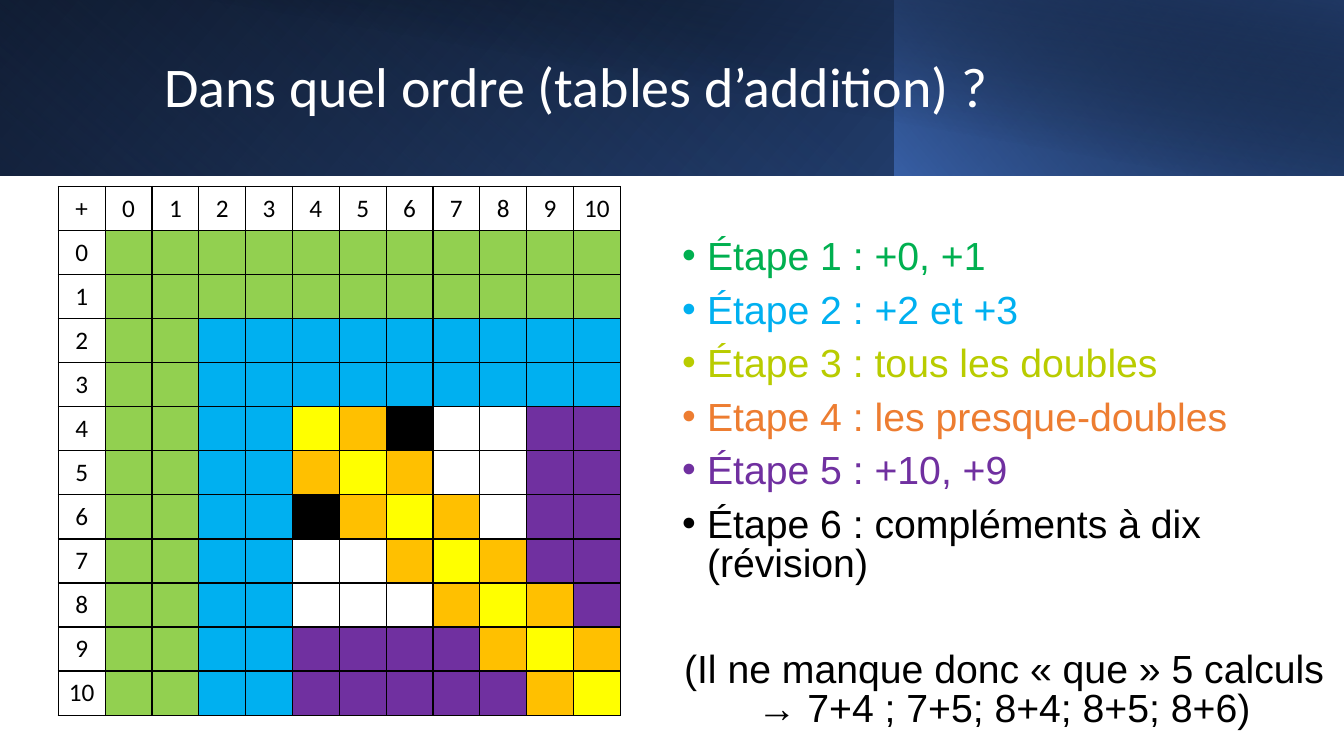
from lxml import etree
from pptx import Presentation
from pptx import util as u
from pptx.dml.color import RGBColor
from pptx.enum import shapes, text
from pptx.oxml import ns

Cm, Pt = u.Cm, u.Pt
GREEN, BLUE, YELLOW, ORANGE = "92D050", "00B0F0", "FFFF00", "FFC000"
BLACK, PURPLE, WHITE = "000000", "7030A0", "FFFFFF"

STEPS = [
    ("Étape 1\u00a0: +0, +1", "00B050"),
    ("Étape 2\u00a0: +2 et +3", BLUE),
    ("Étape 3\u00a0: tous les doubles", "B9CC00"),
    ("Etape 4 : les presque-doubles", "ED7D31"),
    ("Étape 5\u00a0: +10, +9", PURPLE),
    ("Étape 6\u00a0: compléments à dix (révision)", BLACK),
]
REMARK = "(Il ne manque donc «\u00a0que\u00a0» 5 calculs → 7+4 ; 7+5; 8+4; 8+5; 8+6)"


def rgb(hex_color):
    return RGBColor.from_string(hex_color)


def sub(parent, tag, **attrs):
    return etree.SubElement(parent, ns.qn(tag), {k: str(v) for k, v in attrs.items()})


def write(p, words, size=18, font="Calibri", color=BLACK, align=None,
          spacing=None, before=None, bullet=False):
    if bullet:
        pPr = p._p.get_or_add_pPr()
        pPr.set("marL", str(Cm(0.63)))
        pPr.set("indent", str(-Cm(0.63)))
        sub(pPr, "a:buFont", typeface="Arial")
        sub(pPr, "a:buChar", char="•")
    p.alignment = align
    p.line_spacing = spacing
    if before:
        p.space_before = Pt(before)
    r = p.add_run()
    r.text = words
    r.font.size, r.font.name, r.font.bold = Pt(size), font, False
    r.font.color.rgb = rgb(color)


def gradient_band(s, left, width, height, stops, angle, flip=True, rotation=0):
    """Stops are (position %, colour, opacity %)."""
    sp = s.shapes.add_shape(shapes.MSO_SHAPE.RECTANGLE, Cm(left), 0, Cm(width), Cm(height))
    sp.shadow.inherit = False
    sp.line.fill.background()
    sp.rotation = rotation
    spPr = sp.element.spPr
    if flip:
        spPr.find(ns.qn("a:xfrm")).set("flipH", "1")
    grad = etree.Element(ns.qn("a:gradFill"))
    spPr.find(ns.qn("a:prstGeom")).addnext(grad)
    stop_list = sub(grad, "a:gsLst")
    for position, color, opacity in stops:
        clr = sub(sub(stop_list, "a:gs", pos=position * 1000), "a:srgbClr", val=color)
        if opacity < 100:
            sub(clr, "a:alpha", val=opacity * 1000)
    sub(grad, "a:lin", ang=angle * 60000, scaled=0)


def header(s, width, height):
    split = 22.54
    gradient_band(s, 0, width, height, [(0, BLACK, 100), (100, "2F5597", 100)], 140)
    gradient_band(s, 0, split, height, [(20, "4472C4", 0), (100, "203864", 55)], 230,
                  rotation=180)
    gradient_band(s, split, width - split, height, [(0, "4472C4", 66), (100, BLACK, 30)], 220)
    gradient_band(s, 1.27, width - 1.27, height, [(50, BLACK, 0), (99, "203864", 52)], 280,
                  flip=False)
    title = s.shapes.title
    title.element.getparent().append(title.element)  # bring above the bands
    title.left, title.top, title.width, title.height = Cm(3.88), Cm(0.81), Cm(29.06), Cm(2.87)
    tf = title.text_frame
    tf.auto_size = text.MSO_AUTO_SIZE.NONE
    tf.vertical_anchor = text.MSO_ANCHOR.MIDDLE
    write(tf.paragraphs[0], "Dans quel ordre (tables d’addition) ?", size=40, color=WHITE,
          align=text.PP_ALIGN.LEFT, spacing=0.9)


def step_color(a, b):
    """Colour of the step at which a + b is learnt, None if it is left over."""
    if min(a, b) < 2:
        return GREEN
    if min(a, b) < 4:
        return BLUE
    if a == b:
        return YELLOW
    if abs(a - b) == 1:
        return ORANGE
    if a + b == 10:
        return BLACK
    return PURPLE if max(a, b) >= 9 else None


def format_cell(cell, fill):
    cell.margin_left = cell.margin_right = Cm(0.1)
    cell.vertical_anchor = text.MSO_ANCHOR.MIDDLE
    tcPr = cell._tc.get_or_add_tcPr()
    for side in ("a:lnL", "a:lnR", "a:lnT", "a:lnB"):
        sub(sub(sub(tcPr, side, w=Pt(1)), "a:solidFill"), "a:srgbClr", val=BLACK)
    if fill:
        cell.fill.solid()
        cell.fill.fore_color.rgb = rgb(fill)
    else:
        cell.fill.background()


def addition_table(s, left, top, col_width, row_height):
    labels = ["+"] + list(range(11))
    n = len(labels)
    tbl = s.shapes.add_table(n, n, Cm(left), Cm(top), Cm(n * col_width),
                             Cm(n * row_height)).table
    tbl.first_row = tbl.horz_banding = False
    for i in range(n):
        tbl.columns[i].width, tbl.rows[i].height = Cm(col_width), Cm(row_height)
        for j in range(n):
            cell = tbl.cell(i, j)
            is_label = i == 0 or j == 0
            format_cell(cell, None if is_label else step_color(i - 1, j - 1))
            if is_label:
                write(cell.text_frame.paragraphs[0], str(labels[i + j]),
                      align=text.PP_ALIGN.CENTER)


def step_list(s, left, top, width, height):
    tf = s.shapes.add_textbox(Cm(left), Cm(top), Cm(width), Cm(height)).text_frame
    tf.word_wrap = True
    style = dict(size=28, font="Arial", spacing=0.84)
    for i, (words, color) in enumerate(STEPS):
        p = tf.add_paragraph() if i else tf.paragraphs[0]
        write(p, words, color=color, before=10 if i else None, bullet=True, **style)
    write(tf.add_paragraph(), REMARK, align=text.PP_ALIGN.CENTER, before=47, **style)


def main():
    prs = Presentation()
    prs.slide_width, prs.slide_height = Cm(33.87), Cm(19.05)
    s = prs.slides.add_slide(prs.slide_layouts[5])
    header(s, 33.87, 4.43)
    addition_table(s, 1.47, 4.7, 1.18, 1.11)
    step_list(s, 16.94, 5.9, 16.72, 12.1)
    prs.save("out.pptx")


if __name__ == "__main__":
    main()
